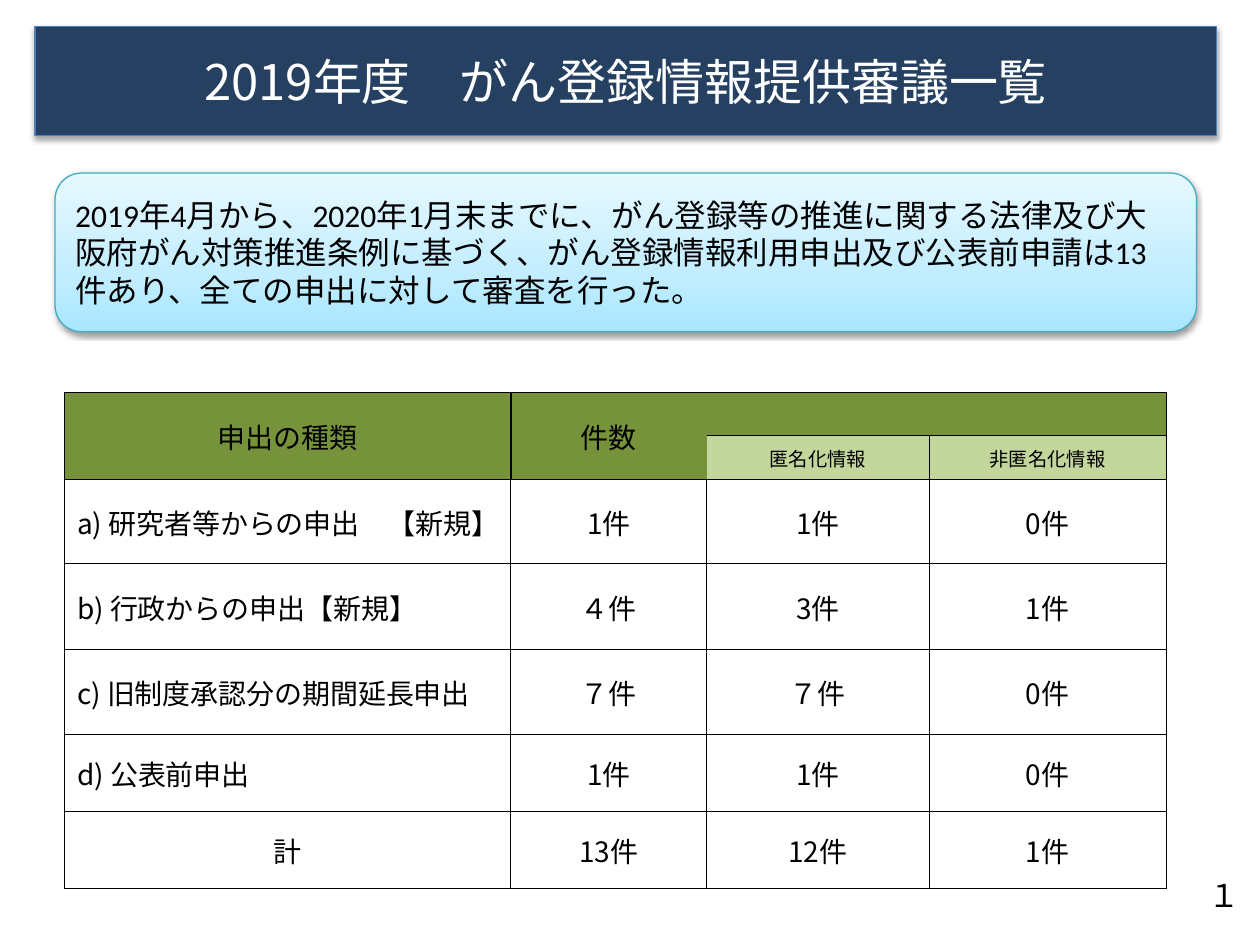
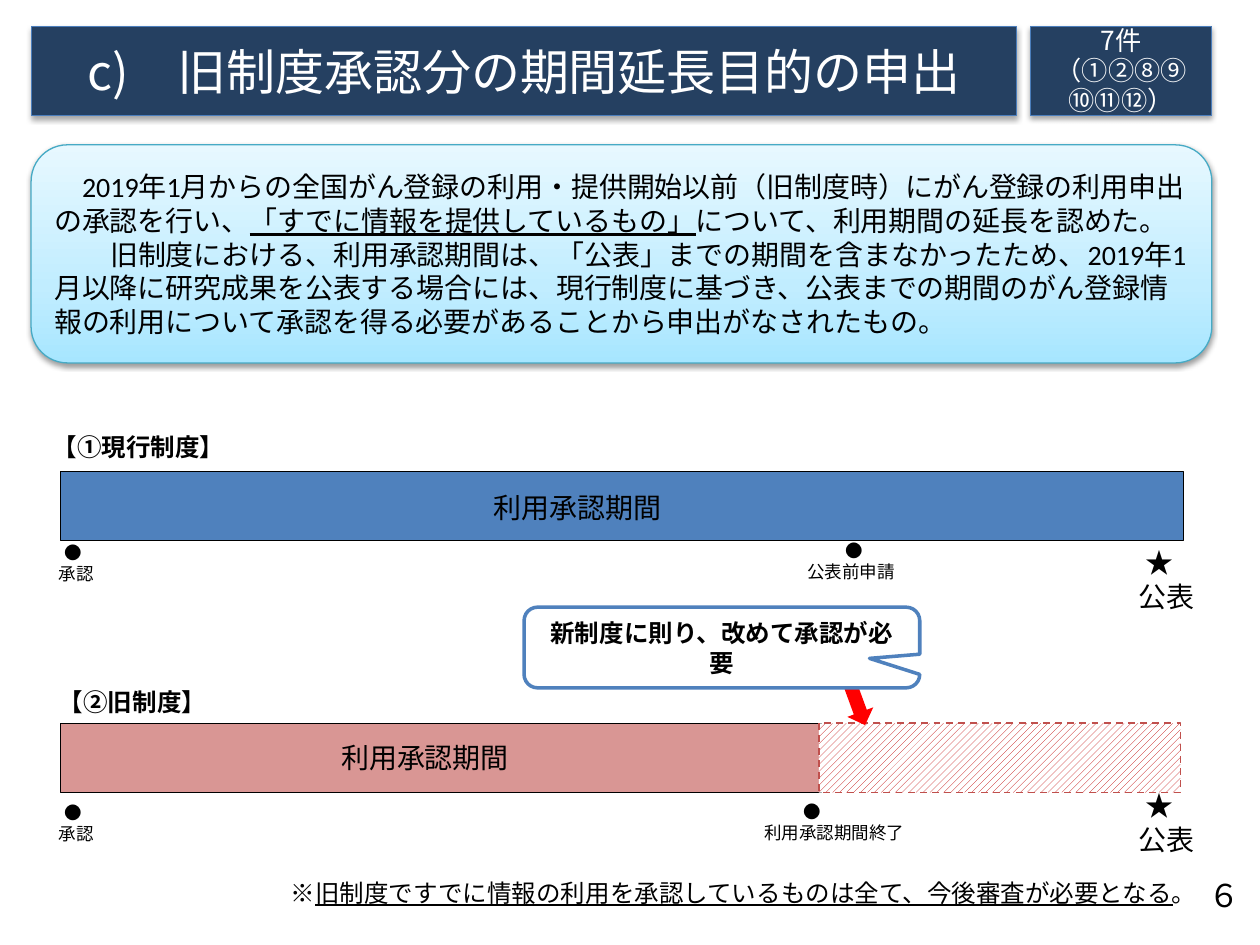
from copy import deepcopy
from dataclasses import dataclass

from lxml.etree import SubElement
from pptx import Presentation
from pptx.dml.color import RGBColor
from pptx.enum.dml import MSO_LINE, MSO_PATTERN
from pptx.enum.lang import MSO_LANGUAGE_ID as Lang
from pptx.enum.shapes import MSO_SHAPE as Shape
from pptx.enum.text import MSO_ANCHOR as Anchor, PP_ALIGN as Align
from pptx.oxml.ns import qn
from pptx.util import Pt

NOTO, CALIBRI = "Noto Sans CJK JP", "Calibri"
BLACK, WHITE, NAVY, NAVY_LINE = "000000", "FFFFFF", "254061", "4B7EBC"
SKY, SKY_LINE = ((0, "A7E6FF"), (0.35, "C1EDFF"), (1, "E7F8FF")), "46AAC5"
BLUE, ROSE, ROSE_LINE, CRIMSON, RED = "4F81BD", "D99694", "C0504D", "C00000", "FF0000"
OLIVE, PALE_GREEN = "76933C", "C3D69B"


@dataclass
class Box:
    x: float
    y: float
    w: float
    h: float

    def lengths(self) -> list:
        return [Pt(v) for v in (self.x, self.y, self.w, self.h)]


@dataclass
class Style:
    size: float
    font: str = NOTO
    color: str = BLACK
    bold: bool = False
    align: Align = Align.LEFT
    asian: str = CALIBRI


@dataclass
class Para:
    runs: tuple
    indent: float = 0
    line: float = 0


@dataclass
class Milestone:
    box: Box
    mark: str
    label: str
    size: float
    indent: float
    line: float = 0


BODY = Style(16)
TITLE = Style(28, color=WHITE, align=Align.CENTER)
COUNT = Style(15, color=WHITE, align=Align.CENTER, asian=NOTO)
HEADING = Style(14, CALIBRI, bold=True, asian=NOTO)
CALLOUT = Style(14, CALIBRI, bold=True, align=Align.CENTER)
TIGHT = 17

HEADERS = [["申出の種類", "件数", "", ""], ["", "", "匿名化情報", "非匿名化情報"]]
APPLICATIONS = [
    ["a) 研究者等からの申出　【新規】", "1件", "1件", "0件"],
    ["b) 行政からの申出【新規】", "４件", "3件", "1件"],
    ["c) 旧制度承認分の期間延長申出", "７件", "７件", "0件"],
    ["d) 公表前申出", "1件", "1件", "0件"],
    ["計", "13件", "12件", "1件"],
]
COL_WIDTHS = [255, 112, 127, 135.5]
ROW_HEIGHTS = [24.75, 25, 48.25, 49, 48.5, 44, 44.5]

MILESTONES = [
    Milestone(Box(26.6, 303.8, 51.8, 34.6), "●", "承認", 10, 3, 14.6),
    Milestone(Box(454.3, 302.4, 95, 34.6), "●", "公表前申請", 10, 22, 14.6),
    Milestone(Box(643.7, 308.2, 60.5, 46), "★", "公表", 16, 4),
    Milestone(Box(26.6, 455, 51.8, 31.7), "●", "承認", 10, 3),
    Milestone(Box(429.8, 451.4, 95, 33.8), "●", "利用承認期間終了", 10, 22, 14.6),
    Milestone(Box(643.7, 447.1, 60.5, 46), "★", "公表", 16, 4),
]


def rgb(value: str) -> RGBColor:
    return RGBColor.from_string(value)


def write(tf, paras: list[Para], style: Style) -> None:
    tf.word_wrap = True
    for i, para in enumerate(paras):
        p = tf.add_paragraph() if i else tf.paragraphs[0]
        p.alignment = style.align
        if para.line:
            p.line_spacing = Pt(para.line)
        f = p.font
        f.name, f.size, f.bold = style.font, Pt(style.size), style.bold
        f.color.rgb = rgb(style.color)
        f.language_id = Lang.JAPANESE
        pPr = p._p.get_or_add_pPr()
        pPr.set("marL", "0")
        pPr.set("indent", str(Pt(para.indent)))
        SubElement(pPr.find(qn("a:defRPr")), qn("a:ea"), typeface=style.asian)
        for part in para.runs:
            r = p.add_run()
            r.text = part.strip("_")
            if part.startswith("_"):
                r.font.underline = True


def add_label(s, box: Box, paras: list[Para], style: Style) -> None:
    write(s.shapes.add_textbox(*box.lengths()).text_frame, paras, style)


def add_box(s, kind: Shape, box: Box, fill: str = "", line: str = "", width: float = 0.75):
    sp = s.shapes.add_shape(kind, *box.lengths())
    sp.shadow.inherit = False
    if fill:
        sp.fill.solid()
        sp.fill.fore_color.rgb = rgb(fill)
    if line:
        sp.line.color.rgb = rgb(line)
        sp.line.width = Pt(width)
    else:
        sp.line.fill.background()
    sp.text_frame.vertical_anchor = Anchor.MIDDLE
    return sp


def cast_shadow(sp, distance: float, alpha: int) -> None:
    effects = sp._element.spPr.find(qn("a:effectLst"))
    shadow = SubElement(effects, qn("a:outerShdw"), blurRad=str(Pt(3.1)),
                        dist=str(Pt(distance)), dir="5400000", rotWithShape="0")
    color = SubElement(shadow, qn("a:srgbClr"), val=BLACK)
    SubElement(color, qn("a:alpha"), val=str(alpha * 1000))


def add_band(s, box: Box, paras: list[Para], style: Style) -> None:
    sp = add_box(s, Shape.RECTANGLE, box, NAVY, NAVY_LINE)
    cast_shadow(sp, 1.8, 35)
    tf = sp.text_frame
    tf.margin_top = tf.margin_bottom = 0
    write(tf, paras, style)


def add_summary(s, box: Box, paras: list[Para], size: float) -> None:
    sp = add_box(s, Shape.ROUNDED_RECTANGLE, box, line=SKY_LINE)
    cast_shadow(sp, 1.6, 38)
    sp.fill.gradient()
    sp.fill.gradient_angle = 90
    stops = sp._element.spPr.find(qn("a:gradFill")).find(qn("a:gsLst"))
    stops.append(deepcopy(stops[0]))
    for stop, (position, color) in zip(sp.fill.gradient_stops, SKY):
        stop.position = position
        stop.color.rgb = rgb(color)
    write(sp.text_frame, paras, Style(size, CALIBRI))


def add_page_number(s, number: str) -> None:
    add_label(s, Box(683.3, 496.8, 36.7, 28.8), [Para((number,))], Style(18))


def set_borders(cell, hidden: str, heavy: str) -> None:
    tcPr = cell._tc.get_or_add_tcPr()
    for i, side in enumerate("LRTB"):
        ln = tcPr.makeelement(qn(f"a:ln{side}"), {"w": str(Pt(1 if side == heavy else 0.5))})
        tcPr.insert(i, ln)
        if side == hidden:
            SubElement(ln, qn("a:noFill"))
        else:
            SubElement(SubElement(ln, qn("a:solidFill")), qn("a:srgbClr"), val=BLACK)


def add_applications_table(s) -> None:
    rows = HEADERS + APPLICATIONS
    box = Box(36.9, 224, sum(COL_WIDTHS), sum(ROW_HEIGHTS))
    table = s.shapes.add_table(len(rows), len(COL_WIDTHS), *box.lengths()).table
    table.first_row = table.horz_banding = False
    for col, width in zip(table.columns, COL_WIDTHS):
        col.width = Pt(width)
    for row, height in zip(table.rows, ROW_HEIGHTS):
        row.height = Pt(height)
    for i, texts in enumerate(rows):
        for j, text in enumerate(texts):
            header = i < len(HEADERS)
            sub_header = i == 1 and j > 1
            cell = table.cell(i, j)
            cell.margin_left = cell.margin_right = cell.margin_top = Pt(0.7)
            cell.margin_bottom = 0
            cell.vertical_anchor = Anchor.MIDDLE
            cell.fill.solid()
            fill = PALE_GREEN if sub_header else OLIVE if header else WHITE
            cell.fill.fore_color.rgb = rgb(fill)
            hidden = {1: "R", 2: "L"}.get(j, "") if header else ""
            heavy = {0: "R", 1: "L"}.get(j, "") if header else ""
            set_borders(cell, hidden, heavy)
            if text:
                item = j == 0 and not header and text != "計"
                style = Style(11 if sub_header else 16, asian=NOTO,
                              align=Align.LEFT if item else Align.CENTER)
                write(cell.text_frame, [Para((text,), 6.5 if item else 0)], style)
    for start, end in (((0, 0), (1, 0)), ((0, 1), (1, 1)), ((0, 2), (0, 3))):
        table.cell(*start).merge(table.cell(*end))


def build_overview(s) -> None:
    add_band(s, Box(20, 15, 675, 62.6), [Para(("2019年度　がん登録情報提供審議一覧",))], TITLE)
    text = ("2019年4月から、2020年1月末までに、がん登録等の推進に関する法律及び"
            "大阪府がん対策推進条例に基づく、がん登録情報利用申出及び公表前申請は"
            "13件あり、全ての申出に対して審査を行った。")
    add_summary(s, Box(31.5, 98.9, 652.3, 90.7), [Para((text,))], 18)
    add_applications_table(s)
    add_page_number(s, "１")


def build_extension(s) -> None:
    add_band(s, Box(17.8, 15, 563, 51), [Para(("c)　旧制度承認分の期間延長目的の申出",))], TITLE)
    counts = [Para((text,), line=TIGHT) for text in ("7件", "（①②⑧⑨⑩⑪⑫）")]
    add_band(s, Box(588.8, 15, 103.7, 51), counts, COUNT)
    add_summary(s, Box(17.8, 82.8, 674.7, 124.6), [
        Para(("2019年1月からの全国がん登録の利用・提供開始以前（旧制度時）にがん登録の利用申出の承認を行い、",
              "_「すでに情報を提供しているもの」",
              "について、利用期間の延長を認めた。"), 16),
        Para(("旧制度における、利用承認期間は、「公表」までの期間を含まなかったため、"
              "2019年1月以降に研究成果を公表する場合には、現行制度に基づき、"
              "公表までの期間のがん登録情報の利用について承認を得る必要があることから申出がなされたもの。",), 32),
    ], 16)

    add_box(s, Shape.RECTANGLE, Box(34.6, 269.3, 641.5, 39.6), BLUE, BLACK, 0.25)
    add_box(s, Shape.RECTANGLE, Box(34.6, 413.3, 434.9, 39.6), ROSE, BLACK, 0.25)
    period = [Para(("利用承認期間",))]
    add_label(s, Box(275, 276.5, 118.8, 27.4), period, BODY)
    add_label(s, Box(187.9, 419.8, 111.6, 27.4), period, BODY)

    gap = add_box(s, Shape.RECTANGLE, Box(468, 413.3, 206.6, 39.6), line=ROSE_LINE, width=1)
    gap.line.dash_style = MSO_LINE.DASH
    gap.fill.patterned()
    gap.fill.pattern = MSO_PATTERN.WIDE_UPWARD_DIAGONAL
    gap.fill.fore_color.rgb = rgb(CRIMSON)
    gap.fill.back_color.rgb = rgb(WHITE)

    for m in MILESTONES:
        paras = [Para((m.mark,), m.indent, m.line), Para((m.label,))]
        add_label(s, m.box, paras, Style(m.size))

    for x, y, text in ((23, 243.4, "【①現行制度】"), (26.6, 388.8, "【②旧制度】")):
        add_label(s, Box(x, y, 172.8, 24.5), [Para((text,), line=TIGHT)], HEADING)

    arrow = add_box(s, Shape.DOWN_ARROW, Box(475.9, 355, 15.8, 61.2), RED)
    arrow.rotation = 339.9
    callout = add_box(s, Shape.ROUNDED_RECTANGULAR_CALLOUT,
                      Box(299.5, 347, 226.1, 46.1), WHITE, BLUE, 2)
    for i, value in enumerate((0.373, 0.135, 0.167)):
        callout.adjustments[i] = value
    write(callout.text_frame, [Para(("新制度に則り、改めて承認が必要",))], CALLOUT)

    note = Para(("※", "_旧制度ですでに情報の利用を承認しているものは全て、今後審査が必要となる。"))
    add_label(s, Box(159.1, 498.2, 518.4, 24.5), [note], Style(14, CALIBRI))
    add_page_number(s, "６")


def main() -> None:
    prs = Presentation()
    prs.slide_width, prs.slide_height = Pt(720), Pt(540)
    for build in (build_overview, build_extension):
        build(prs.slides.add_slide(prs.slide_layouts[6]))
    prs.save("out.pptx")


if __name__ == "__main__":
    main()
